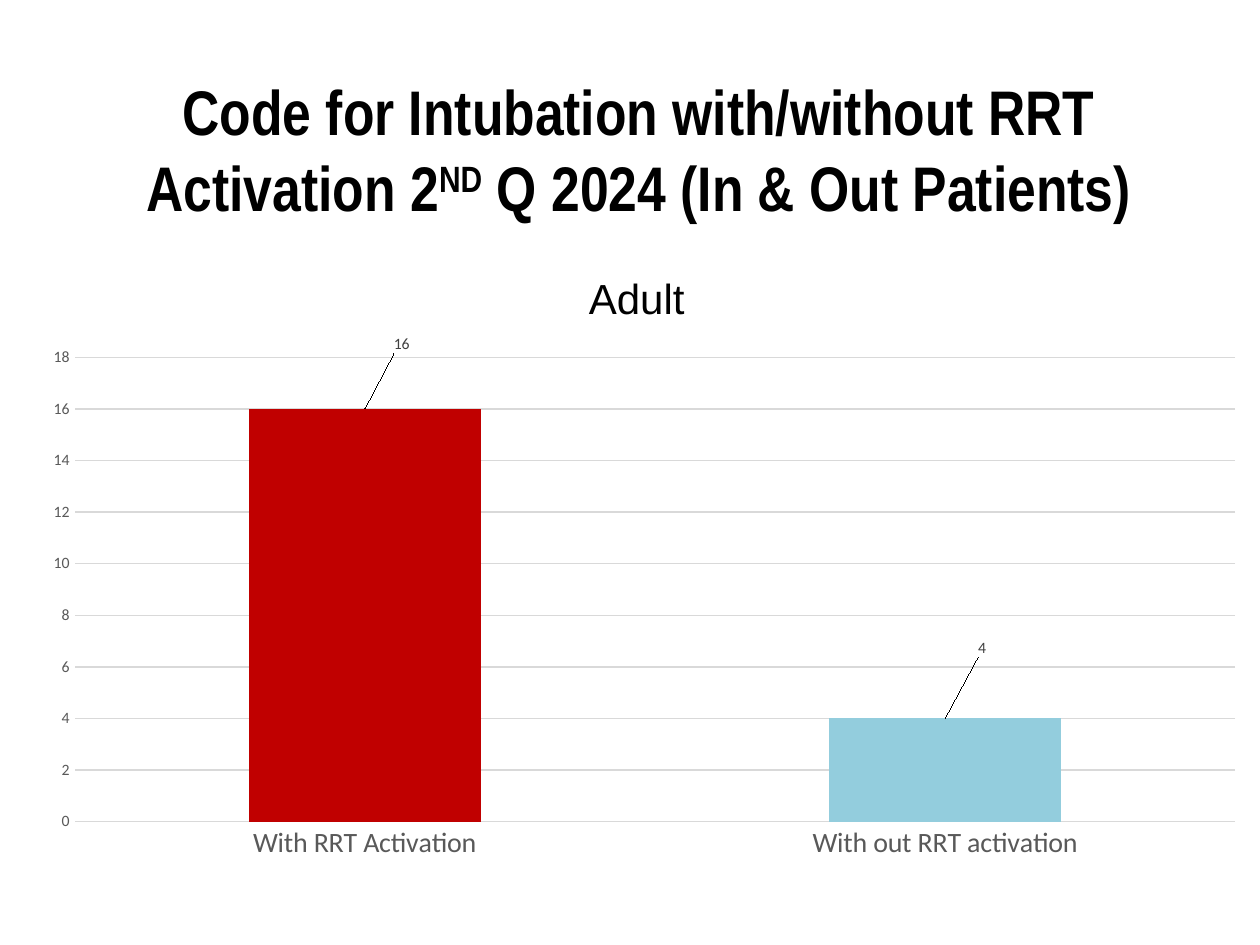
"""Build a slide charting intubation codes with and without RRT activation."""
from lxml.etree import SubElement, fromstring
from pptx import Presentation
from pptx.chart.data import CategoryChartData
from pptx.dml.color import RGBColor
from pptx.enum.chart import XL_CHART_TYPE, XL_LABEL_POSITION, XL_TICK_MARK
from pptx.enum.text import MSO_ANCHOR, PP_ALIGN
from pptx.oxml.ns import qn
from pptx.util import Inches, Pt

BLACK = RGBColor(0x00, 0x00, 0x00)
AXIS_GRAY = RGBColor(0x59, 0x59, 0x59)
LABEL_GRAY = RGBColor(0x40, 0x40, 0x40)
GRID_GRAY = RGBColor(0xD9, 0xD9, 0xD9)
RED = RGBColor(0xC0, 0x00, 0x00)
LIGHT_BLUE = RGBColor(0x93, 0xCD, 0xDD)
SERIES_BLUE = RGBColor(0x4F, 0x81, 0xBD)

HEADING = [
    ("Code for Intubation with/without RRT Activation 2", 0),
    ("ND", 30000),
    (" Q 2024 (In & Out Patients)", 0),
]
GROUP = "Adult "
BARS = [
    ("With RRT Activation", 16, RED, {"x": 0.03, "y": -0.08}),
    ("With out RRT activation", 4, LIGHT_BLUE, {"x": 0.03, "y": -0.09}),
]
PLOT_AREA = {
    "layoutTarget": "inner", "xMode": "edge", "yMode": "edge",
    "x": 0.04, "y": 0.18, "w": 0.94, "h": 0.74,
}


def style_font(font, name, size, color, bold=False):
    font.name, font.size, font.bold = name, Pt(size), bold
    font.color.rgb = color


def make_layout(settings):
    layout = fromstring(
        '<c:layout xmlns:c="http://schemas.openxmlformats.org/drawingml/2006/chart"/>'
    )
    manual = SubElement(layout, qn("c:manualLayout"))
    for tag, value in settings.items():
        SubElement(manual, qn(f"c:{tag}")).set("val", str(value))
    return layout


def add_heading(slide):
    heading = slide.shapes.add_textbox(Inches(0.58), Inches(0.6), Inches(8.98), Inches(1.15))
    frame = heading.text_frame
    frame.word_wrap = True
    frame.vertical_anchor = MSO_ANCHOR.MIDDLE
    line = frame.paragraphs[0]
    line.alignment = PP_ALIGN.CENTER
    style_font(line.font, "Arial Narrow", 36, BLACK, bold=True)
    for words, baseline in HEADING:
        run = line.add_run()
        run.text = words
        if baseline:
            run.font._element.set("baseline", str(baseline))


def style_axis(axis, size):
    axis.major_tick_mark = axis.minor_tick_mark = XL_TICK_MARK.NONE
    axis.format.line.fill.background()
    style_font(axis.tick_labels.font, "Calibri", size, AXIS_GRAY)


def add_activation_chart(slide):
    activations = CategoryChartData()
    activations.categories = [bar[0] for bar in BARS]
    activations.add_series(GROUP, [bar[1] for bar in BARS])
    chart = slide.shapes.add_chart(
        XL_CHART_TYPE.COLUMN_CLUSTERED,
        Inches(0.2), Inches(1.94), Inches(9.8), Inches(4.98), activations,
    ).chart
    style_font(chart.font, "Calibri", 10, BLACK)
    chart.has_legend = False
    chart.has_title = True
    chart_title = chart.chart_title.text_frame
    chart_title.text = GROUP
    style_font(chart_title.paragraphs[0].font, "Arial", 24, BLACK)

    style_axis(chart.category_axis, 16)
    style_axis(chart.value_axis, 9)
    chart.value_axis.minimum_scale = 0
    chart.value_axis.maximum_scale = 18
    chart.value_axis.major_unit = 2
    gridline = chart.value_axis.major_gridlines.format.line
    gridline.color.rgb, gridline.width = GRID_GRAY, Pt(0.75)

    plot = chart.plots[0]
    plot.gap_width = 150
    plot.vary_by_categories = False
    series = plot.series[0]
    series.format.fill.solid()
    series.format.fill.fore_color.rgb = SERIES_BLUE
    series.data_labels.show_value = True
    style_font(series.data_labels.font, "Calibri", 9, LABEL_GRAY)
    for index, (_, _, color, offset) in enumerate(BARS):
        point = series.points[index]
        point.format.fill.solid()
        point.format.fill.fore_color.rgb = color
        style_font(point.data_label.font, "Calibri", 9, LABEL_GRAY)
        point.data_label.position = XL_LABEL_POSITION.OUTSIDE_END
    for label, bar in zip(series._element.iter(qn("c:dLbl")), BARS):
        label.insert(1, make_layout(bar[3]))

    plot_area = chart._chartSpace.find(f".//{qn('c:plotArea')}")
    for default in plot_area.findall(qn("c:layout")):
        plot_area.remove(default)
    plot_area.insert(0, make_layout(PLOT_AREA))


def main():
    deck = Presentation()
    deck.slide_width, deck.slide_height = Inches(10), Inches(7.5)
    slide = deck.slides.add_slide(deck.slide_layouts[6])
    add_heading(slide)
    add_activation_chart(slide)
    deck.save("out.pptx")


if __name__ == "__main__":
    main()
